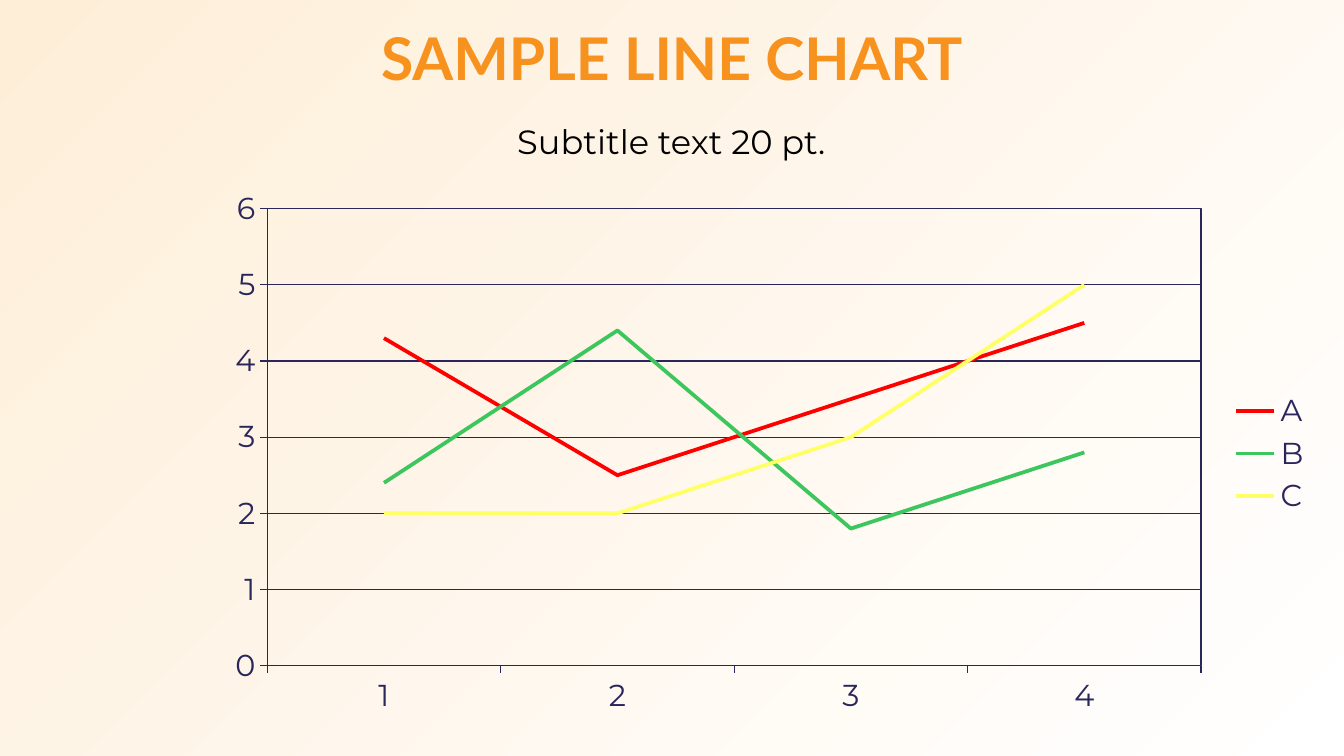
import pptx
import pptx.chart.data
import pptx.dml.color
import pptx.enum.chart
import pptx.enum.text
import pptx.oxml
import pptx.oxml.ns
import pptx.util
from pptx.util import Inches

NAVY = "29265B"
ORANGE = "F7921E"
SERIES = {
    "A": ((4.3, 2.5, 3.5, 4.5), "FF0000"),
    "B": ((2.4, 4.4, 1.8, 2.8), "3EC65E"),
    "C": ((2, 2, 3, 5), "FFFF66"),
}


def color(hex_value):
    return pptx.dml.color.RGBColor.from_string(hex_value)


def set_attributes(target, values):
    for name, value in values.items():
        setattr(target, name, value)


def set_font(font, name, size, hex_value, bold=False):
    set_attributes(font, {"name": name, "size": pptx.util.Pt(size), "bold": bold})
    font.color.rgb = color(hex_value)


def set_line(line, hex_value, width):
    line.color.rgb = color(hex_value)
    line.width = pptx.util.Pt(width)


def set_background(slide):
    """Fill with a circular gradient, white at the bottom right corner."""
    fill = slide.background.fill
    fill.gradient()
    for stop, hex_value in zip(fill.gradient_stops, ("FFFFFF", "FEEED8")):
        stop.color.rgb = color(hex_value)
    gradient = slide.element.find(".//" + pptx.oxml.ns.qn("a:gradFill"))
    linear = gradient.find(pptx.oxml.ns.qn("a:lin"))
    circle = pptx.oxml.parse_xml(
        f'<a:path {pptx.oxml.ns.nsdecls("a")} path="circle">'
        '<a:fillToRect l="100000" t="100000"/></a:path>')
    gradient.replace(linear, circle)


def add_text(slide, text, position, anchor, font_values):
    frame = slide.shapes.add_textbox(*map(Inches, position)).text_frame
    margins = ("margin_left", "margin_top", "margin_right", "margin_bottom")
    set_attributes(frame, dict.fromkeys(margins, Inches(0.05)))
    set_attributes(frame, {"word_wrap": True, "vertical_anchor": anchor})
    paragraph = frame.paragraphs[0]
    set_attributes(paragraph, {
        "alignment": pptx.enum.text.PP_ALIGN.CENTER, "line_spacing": 0.9})
    run = paragraph.add_run()
    run.text = text
    set_font(run.font, *font_values)


def format_axis(axis):
    set_attributes(axis, {
        "major_tick_mark": pptx.enum.chart.XL_TICK_MARK.OUTSIDE,
        "minor_tick_mark": pptx.enum.chart.XL_TICK_MARK.NONE,
    })
    set_font(axis.tick_labels.font, "Montserrat", 18, NAVY)
    set_line(axis.format.line, NAVY, 0.75)


def frame_plot_area(chart):
    """Fix the inner plot area inside the chart and outline it."""
    plot_area = chart.element.find(".//" + pptx.oxml.ns.qn("c:plotArea"))
    for layout in plot_area.findall(pptx.oxml.ns.qn("c:layout")):
        plot_area.remove(layout)
    namespaces = pptx.oxml.ns.nsdecls("c", "a")
    plot_area.insert(0, pptx.oxml.parse_xml(
        f'<c:layout {namespaces}><c:manualLayout><c:layoutTarget val="inner"/>'
        '<c:xMode val="edge"/><c:yMode val="edge"/><c:x val="0.05"/>'
        '<c:y val="0.05"/><c:w val="0.84"/><c:h val="0.84"/>'
        '</c:manualLayout></c:layout>'))
    plot_area.append(pptx.oxml.parse_xml(
        f'<c:spPr {namespaces}><a:noFill/><a:ln w="9525"><a:solidFill>'
        f'<a:srgbClr val="{NAVY}"/></a:solidFill></a:ln></c:spPr>'))


def add_line_chart(slide, position):
    data = pptx.chart.data.CategoryChartData()
    data.categories = ["1", "2", "3", "4"]
    for name, (values, _) in SERIES.items():
        data.add_series(name, values)
    chart = slide.shapes.add_chart(
        pptx.enum.chart.XL_CHART_TYPE.LINE, *map(Inches, position), data).chart
    set_attributes(chart, {"has_title": False, "has_legend": True})
    set_font(chart.font, "Montserrat", 18, NAVY)
    set_attributes(chart.legend, {
        "position": pptx.enum.chart.XL_LEGEND_POSITION.RIGHT,
        "include_in_layout": False,
    })
    set_font(chart.legend.font, "Montserrat", 18, NAVY)
    format_axis(chart.category_axis)
    format_axis(chart.value_axis)
    set_attributes(chart.value_axis, {
        "minimum_scale": 0, "maximum_scale": 6, "major_unit": 1,
        "has_major_gridlines": True,
    })
    set_line(chart.value_axis.major_gridlines.format.line, NAVY, 0.75)
    chart.plots[0].vary_by_categories = False
    for series in chart.plots[0].series:
        series.smooth = False
        set_line(series.format.line, SERIES[series.name][1], 2.25)
    frame_plot_area(chart)


def main():
    presentation = pptx.Presentation()
    set_attributes(presentation, {
        "slide_width": Inches(11.11), "slide_height": Inches(6.25)})
    slide = presentation.slides.add_slide(presentation.slide_layouts[6])
    set_background(slide)
    anchors = pptx.enum.text.MSO_ANCHOR
    add_text(slide, "SAMPLE LINE CHART", (0, 0.21, 11.11, 0.59),
             anchors.MIDDLE, ("Lato", 35, ORANGE, True))
    add_text(slide, "Subtitle text 20 pt.", (0.3, 0.99, 10.5, 4.81),
             anchors.TOP, ("Montserrat", 20, "000000"))
    add_line_chart(slide, (1.75, 1.5, 9.19, 4.5))
    presentation.save("out.pptx")


if __name__ == "__main__":
    main()
